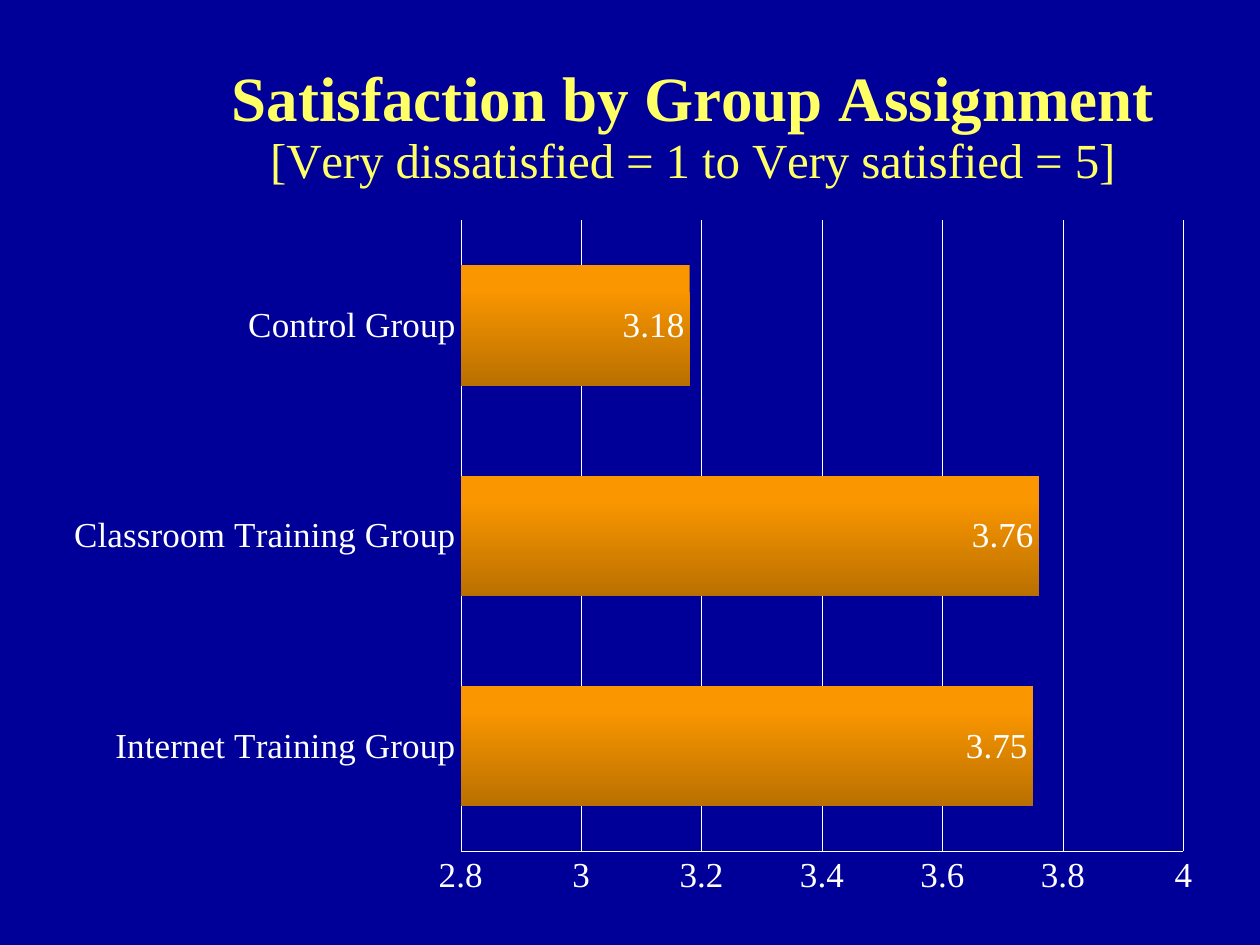
from lxml import etree
from pptx import Presentation
from pptx.chart.data import CategoryChartData
from pptx.dml.color import RGBColor
from pptx.enum.chart import XL_CHART_TYPE, XL_LABEL_POSITION, XL_TICK_MARK
from pptx.oxml.ns import qn
from pptx.util import Inches, Pt

BAR = XL_CHART_TYPE.BAR_CLUSTERED
INSIDE_END = XL_LABEL_POSITION.INSIDE_END
NO_TICK = XL_TICK_MARK.NONE

FONT = "Times New Roman"
COLORS = {"background": "000099", "title": "FFFF66", "text": "FFFFFF",
          "bar_light": "FA9600", "bar_dark": "BA7000"}
TITLE_LINES = [
    ("Satisfaction by Group Assignment", {"size": Pt(36), "bold": True}),
    ("[Very dissatisfied = 1 to Very satisfied = 5]",
     {"size": Pt(28), "bold": False}),
]
SATISFACTION = {"Internet Training Group": 3.75,
                "Classroom Training Group": 3.76,
                "Control Group": 3.18}


def rgb(name):
    return RGBColor.from_string(COLORS[name])


def set_font(font, color, **values):
    font.color.rgb = rgb(color)
    for key, value in {"name": FONT, **values}.items():
        setattr(font, key, value)


def place(parent, **values):
    """Give a chart part a manual layout, in fractions of the chart."""
    layout = parent.find(qn("c:layout"))
    if layout is None:
        layout = etree.Element(qn("c:layout"))
        parent.insert(0, layout)
    manual = etree.SubElement(layout, qn("c:manualLayout"))
    for tag, value in values.items():
        etree.SubElement(manual, qn(f"c:{tag}")).set("val", str(value))


def style_title(chart):
    title = chart.chart_title
    tf = title.text_frame
    for i, (text, values) in enumerate(TITLE_LINES):
        p = tf.add_paragraph() if i else tf.paragraphs[0]
        r = p.add_run()
        r.text = text
        set_font(r.font, "title", **values)
    title.include_in_layout = False
    place(title._element, xMode="edge", yMode="edge", x=0.15, y=0.02)


def style_axes(chart):
    value_axis, category_axis = chart.value_axis, chart.category_axis
    scale = {"minimum_scale": 2.8, "maximum_scale": 4, "major_unit": 0.2}
    for key, value in scale.items():
        setattr(value_axis, key, value)
    value_axis.tick_labels.number_format = "General"
    value_axis.tick_labels.number_format_is_linked = False
    for axis in (value_axis, category_axis):
        axis.major_tick_mark = axis.minor_tick_mark = NO_TICK
    for part in (value_axis, category_axis, value_axis.major_gridlines):
        part.format.line.color.rgb = rgb("text")
        part.format.line.width = Pt(0.25)


def style_bars(plot):
    plot.gap_width, plot.overlap = 75, 40
    plot.vary_by_categories = False
    series = plot.series[0]
    series.invert_if_negative = False
    fill = series.format.fill
    fill.gradient()
    fill.gradient_angle = 270
    stops = zip(fill.gradient_stops, (0.2, 1), ("bar_light", "bar_dark"))
    for stop, position, color in stops:
        stop.position = position
        stop.color.rgb = rgb(color)
    labels = series.data_labels
    labels.show_value = True
    labels.position = INSIDE_END
    set_font(labels.font, "text", size=Pt(20))


def add_satisfaction_chart(s, left, top, width, height):
    data = CategoryChartData()
    data.categories = list(SATISFACTION)
    data.add_series("Series 1", list(SATISFACTION.values()))
    chart = s.shapes.add_chart(BAR, left, top, width, height, data).chart
    chart.has_legend = False
    set_font(chart.font, "text", size=Pt(20))
    style_title(chart)
    style_axes(chart)
    style_bars(chart.plots[0])
    plot_area = chart._chartSpace.chart.plotArea
    place(plot_area, layoutTarget="inner", xMode="edge", yMode="edge",
          x=0.35, y=0.205, w=0.62, h=0.724)


def main():
    prs = Presentation()
    prs.slide_width, prs.slide_height = Inches(10), Inches(7.5)
    s = prs.slides.add_slide(prs.slide_layouts[6])
    s.background.fill.solid()
    s.background.fill.fore_color.rgb = rgb("background")
    add_satisfaction_chart(s, Inches(0.42), Inches(0.33),
                           Inches(9.25), Inches(6.92))
    prs.save("out.pptx")


if __name__ == "__main__":
    main()
